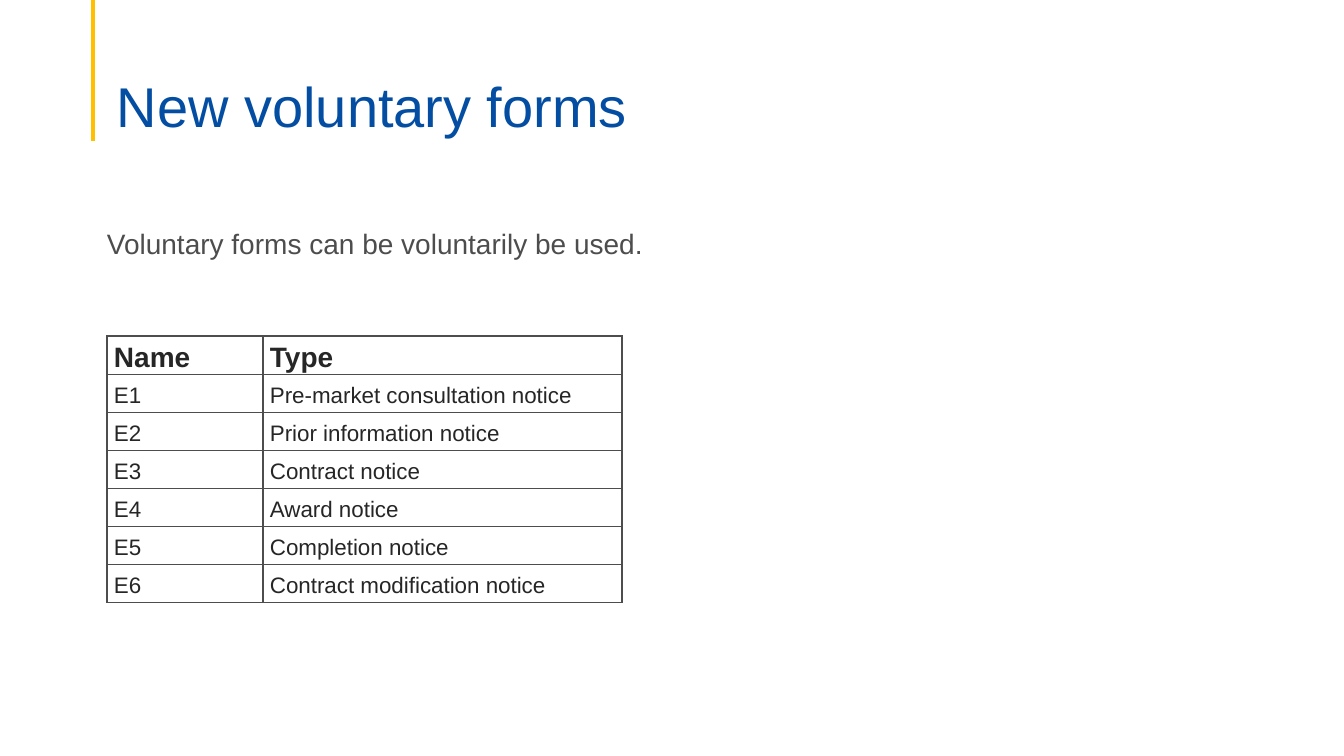
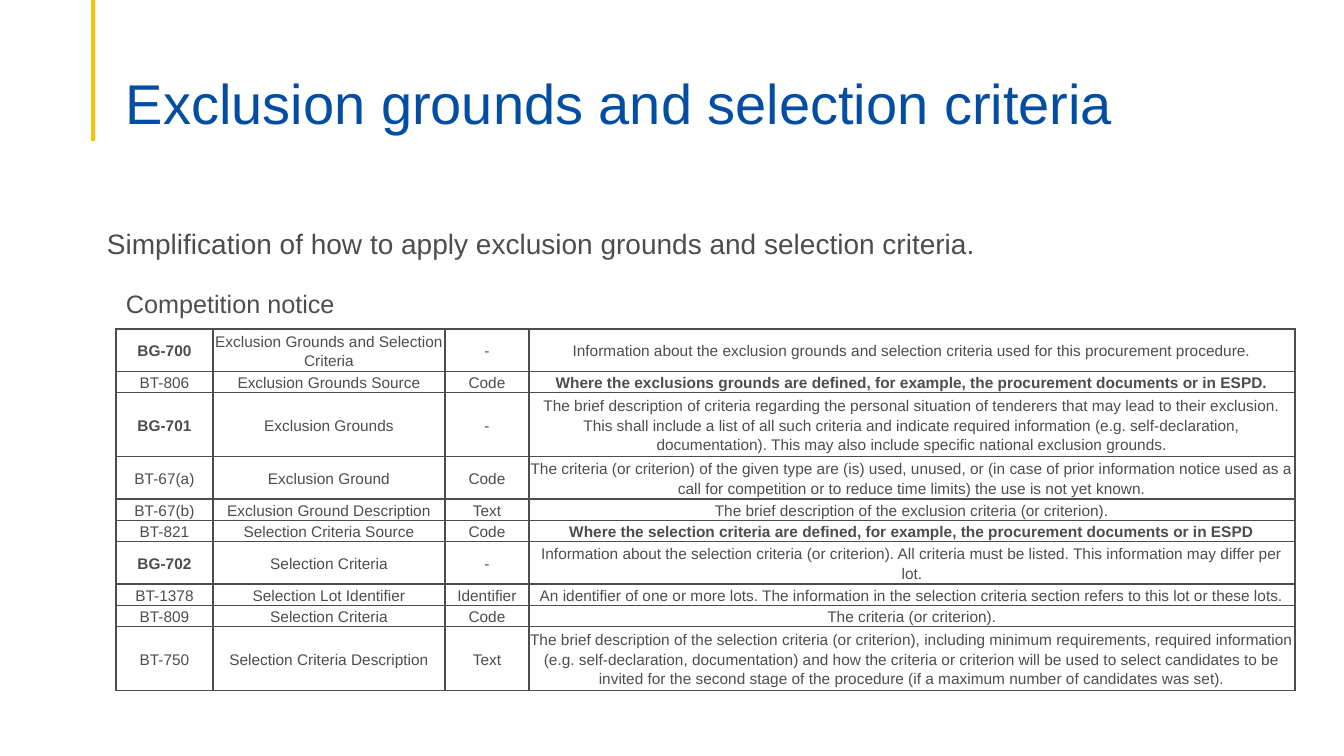
from dataclasses import dataclass

from lxml.etree import SubElement
from pptx import Presentation
from pptx.dml.color import RGBColor
from pptx.enum.shapes import MSO_CONNECTOR as Connector
from pptx.enum.text import MSO_ANCHOR as Anchor, MSO_AUTO_SIZE as AutoSize, PP_ALIGN as Align
from pptx.oxml import parse_xml
from pptx.oxml.ns import nsdecls, qn
from pptx.util import Pt

EMU_PER_PX = 914400 / 100.8
SLIDE_SIZE = (1344, 756)
TITLE_ONLY_LAYOUT = 5


@dataclass(frozen=True)
class Theme:
    font: str = "Arial"
    title_color: str = "034EA2"
    text_color: str = "4D4D4D"
    strong_color: str = "262626"
    accent_color: str = "FFC000"
    title_size: int = 40
    lead_size: int = 20
    label_size: int = 18
    cell_size: int = 16
    small_size: int = 11


THEME = Theme()

FORMS = [
    ("Name", "Type"),
    ("E1", "Pre-market consultation notice"),
    ("E2", "Prior information notice"),
    ("E3", "Contract notice"),
    ("E4", "Award notice"),
    ("E5", "Completion notice"),
    ("E6", "Contract modification notice"),
]

# Each row: number of text lines, then the cells
CRITERIA = [
    (2, "BG-700", "Exclusion Grounds and Selection Criteria", "-",
     "Information about the exclusion grounds and selection criteria used for this "
     "procurement procedure."),
    (1, "BT-806", "Exclusion Grounds Source", "Code",
     "Where the exclusions grounds are defined, for example, the procurement documents "
     "or in ESPD."),
    (3, "BG-701", "Exclusion Grounds", "-",
     "The brief description of criteria regarding the personal situation of tenderers that "
     "may lead to their exclusion. This shall include a list of all such criteria and indicate "
     "required information (e.g. self-declaration, documentation). This may also include "
     "specific national exclusion grounds."),
    (2, "BT-67(a)", "Exclusion Ground", "Code",
     "The criteria (or criterion) of the given type are (is) used, unused, or (in case of prior "
     "information notice used as a call for competition or to reduce time limits) the use is "
     "not yet known."),
    (1, "BT-67(b)", "Exclusion Ground Description", "Text",
     "The brief description of the exclusion criteria (or criterion)."),
    (1, "BT-821", "Selection Criteria Source", "Code",
     "Where the selection criteria are defined, for example, the procurement documents "
     "or in ESPD"),
    (2, "BG-702", "Selection Criteria", "-",
     "Information about the selection criteria (or criterion). All criteria must be listed. "
     "This information may differ per lot."),
    (1, "BT-1378", "Selection Lot Identifier", "Identifier",
     "An identifier of one or more lots. The information in the selection criteria section "
     "refers to this lot or these lots."),
    (1, "BT-809", "Selection Criteria", "Code", "The criteria (or criterion)."),
    (3, "BT-750", "Selection Criteria Description", "Text",
     "The brief description of the selection criteria (or criterion), including minimum "
     "requirements, required information (e.g. self-declaration, documentation) and how the "
     "criteria or criterion will be used to select candidates to be invited for the second "
     "stage of the procedure (if a maximum number of candidates was set)."),
]


def px(length):
    return round(length * EMU_PER_PX)


def format_font(font, size, color, bold=False):
    font.name = THEME.font
    font.size = Pt(size)
    font.bold = bold
    font.color.rgb = RGBColor.from_string(color)


def set_insets(target, left, top, right, bottom):
    target.margin_left, target.margin_top = px(left), px(top)
    target.margin_right, target.margin_bottom = px(right), px(bottom)


# Title and accent line, common to all slides
def add_titled_slide(presentation, title, box):
    slide = presentation.slides.add_slide(presentation.slide_layouts[TITLE_ONLY_LAYOUT])
    line = slide.shapes.add_connector(Connector.STRAIGHT, px(93), 0, px(93), px(141))
    line.line.color.rgb = RGBColor.from_string(THEME.accent_color)
    line.line.width = Pt(2.25)
    SubElement(line._element.spPr, qn("a:effectLst"))

    shape = slide.shapes.title
    shape.left, shape.top, shape.width, shape.height = map(px, box)
    frame = shape.text_frame
    frame.text = title
    frame.word_wrap = True
    frame.auto_size = AutoSize.NONE
    frame.vertical_anchor = Anchor.BOTTOM
    set_insets(frame, 10, 5, 10, 0)
    paragraph = frame.paragraphs[0]
    paragraph.alignment = Align.LEFT
    paragraph.line_spacing = 0.9
    format_font(paragraph.runs[0].font, THEME.title_size, THEME.title_color)
    return slide


def add_text(slide, text, box, size, wrap=True):
    frame = slide.shapes.add_textbox(*map(px, box)).text_frame
    frame.text = text
    frame.word_wrap = wrap
    frame.auto_size = AutoSize.SHAPE_TO_FIT_TEXT
    format_font(frame.paragraphs[0].runs[0].font, size, THEME.text_color)


def add_lead(slide, text):
    add_text(slide, text, (97, 222, 1198, 44), THEME.lead_size)


def add_borders(cell):
    properties = cell._tc.get_or_add_tcPr()
    for position, side in enumerate(("lnL", "lnR", "lnT", "lnB")):
        properties.insert(position, parse_xml(
            f'<a:{side} {nsdecls("a")} w="{Pt(1)}"><a:solidFill>'
            f'<a:srgbClr val="{THEME.text_color}"/></a:solidFill></a:{side}>'))


# Bordered table; cell_style(row, text) gives size, colour and bold
def add_grid(slide, origin, widths, heights, rows, cell_style, alignment, side_inset):
    box = (*origin, sum(widths), sum(heights))
    table = slide.shapes.add_table(len(rows), len(widths), *map(px, box)).table
    table.first_row = table.horz_banding = False
    for column, width in zip(table.columns, widths):
        column.width = px(width)
    for row, height in zip(table.rows, heights):
        row.height = px(height)
    for row_index, texts in enumerate(rows):
        for column_index, text in enumerate(texts):
            cell = table.cell(row_index, column_index)
            cell.text = text
            cell.fill.background()
            cell.vertical_anchor = Anchor.MIDDLE
            set_insets(cell, side_inset, 0, side_inset, 0)
            add_borders(cell)
            paragraph = cell.text_frame.paragraphs[0]
            paragraph.alignment = alignment
            paragraph.line_spacing = 1.15
            format_font(paragraph.runs[0].font, *cell_style(row_index, text))


def form_style(row, text):
    size = THEME.cell_size if row else THEME.lead_size
    return size, THEME.strong_color, row == 0


def criteria_style(row, text):
    return THEME.small_size, THEME.text_color, text.startswith(("BG-", "Where the"))


def build_forms_slide(presentation):
    slide = add_titled_slide(presentation, "New voluntary forms", (107, 53, 1159, 87))
    add_lead(slide, "Voluntary forms can be voluntarily be used.")
    add_grid(slide, (107, 336), (156, 359), [38] * len(FORMS), FORMS,
             form_style, Align.LEFT, 7)


def build_criteria_slide(presentation):
    slide = add_titled_slide(presentation, "Exclusion grounds and selection criteria",
                             (116, 70, 1154, 67))
    add_lead(slide, "Simplification of how to apply exclusion grounds and selection criteria.")
    add_text(slide, "Competition notice", (116, 283, 231, 40), THEME.label_size, wrap=False)
    heights = [21 * lines for lines, *_ in CRITERIA]
    rows = [cells for _, *cells in CRITERIA]
    add_grid(slide, (116, 329), (97, 232, 84, 766), heights, rows,
             criteria_style, Align.CENTER, 0)


def main():
    presentation = Presentation()
    presentation.slide_width, presentation.slide_height = map(px, SLIDE_SIZE)
    build_forms_slide(presentation)
    build_criteria_slide(presentation)
    presentation.save("out.pptx")


if __name__ == "__main__":
    main()
